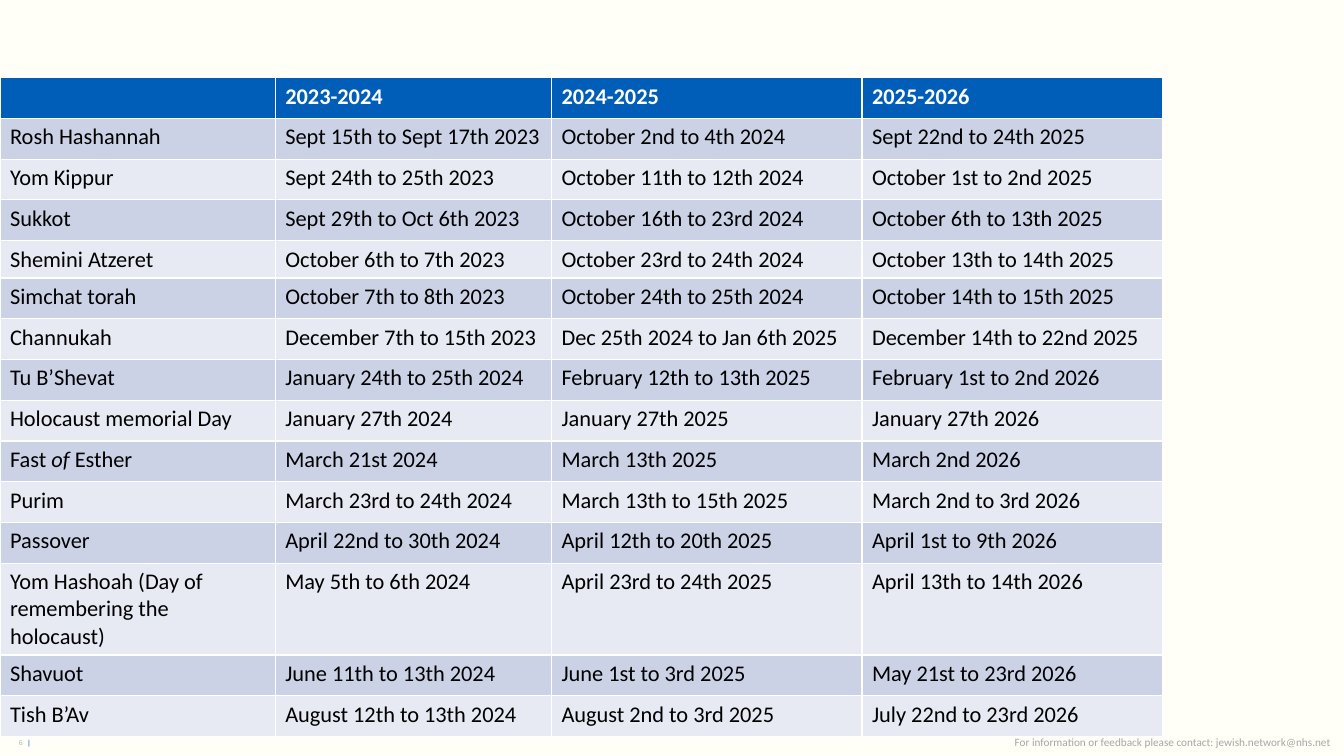
import pptx
import pptx.util
import pptx.dml.color
import pptx.enum.text
import pptx.oxml.ns
import lxml.etree

Inches = pptx.util.Inches
Pt = pptx.util.Pt
RGBColor = pptx.dml.color.RGBColor

CREAM = RGBColor(0xFF, 0xFF, 0xF7)
BLUE = RGBColor(0x00, 0x5E, 0xB8)
WHITE = RGBColor(0xFF, 0xFF, 0xFF)
BLACK = RGBColor(0x00, 0x00, 0x00)
DARK = RGBColor(0xCC, 0xD2, 0xE6)
LIGHT = RGBColor(0xE7, 0xEA, 0xF3)
GREY = RGBColor(0xA6, 0xA6, 0xA6)
STEEL = RGBColor(0xAD, 0xB6, 0xBE)

# Asterisks enclose italic words.
DATES = [
    ("", "2023-2024", "2024-2025", "2025-2026"),
    ("Rosh Hashannah", "Sept 15th to Sept 17th 2023", "October 2nd to 4th 2024", "Sept 22nd to 24th 2025"),
    ("Yom Kippur", "Sept 24th to 25th 2023", "October 11th to 12th 2024", "October 1st to 2nd 2025"),
    ("Sukkot", "Sept 29th to Oct 6th 2023", "October 16th to 23rd 2024", "October 6th to 13th 2025"),
    ("Shemini Atzeret", "October 6th to 7th 2023", "October 23rd to 24th 2024", "October 13th to 14th 2025"),
    ("Simchat torah", "October 7th to 8th 2023", "October 24th to 25th 2024", "October 14th to 15th 2025"),
    ("Channukah", "December 7th to 15th 2023", "Dec 25th 2024 to Jan 6th 2025", "December 14th to 22nd 2025"),
    ("Tu B’Shevat", "January 24th to 25th 2024", "February 12th to 13th 2025", "February 1st to 2nd 2026"),
    ("Holocaust memorial Day", "January 27th 2024", "January 27th 2025", "January 27th 2026"),
    ("Fast *of* Esther", "March 21st 2024", "March 13th 2025", "March 2nd 2026"),
    ("Purim", "March 23rd to 24th 2024", "March 13th to 15th 2025", "March 2nd to 3rd 2026"),
    ("Passover", "April 22nd to 30th 2024", "April 12th to 20th 2025", "April 1st to 9th 2026"),
    ("Yom Hashoah (Day of remembering the holocaust)", "May 5th to 6th 2024",
     "April 23rd to 24th 2025", "April 13th to 14th 2026"),
    ("Shavuot", "June 11th to 13th 2024", "June 1st to 3rd 2025", "May 21st to 23rd 2026"),
    ("Tish B’Av", "August 12th to 13th 2024", "August 2nd to 3rd 2025", "July 22nd to 23rd 2026"),
]
WIDTHS = (2.73, 2.74, 3.08, 2.98)
HEIGHTS = {"Shemini Atzeret": 0.37, DATES[12][0]: 0.91}


def add_run(para, text, font, size, color):
    run = para.add_run()
    run.text = text
    run.font.name = font
    run.font.size = Pt(size)
    run.font.color.rgb = color
    return run


def fill_cell(cell, text, fill, color, bold):
    cell.fill.solid()
    cell.fill.fore_color.rgb = fill
    para = cell.text_frame.paragraphs[0]
    for i, part in enumerate(text.split("*")):
        if part:
            run = add_run(para, part, "Calibri", 16, color)
            run.font.bold = bold
            run.font.italic = i % 2 == 1


def add_dates(slide, left, top, width, height):
    """Draw the holiday table; plain rows share the height left by the special ones."""
    table = slide.shapes.add_table(
        len(DATES), len(WIDTHS), Inches(left), Inches(top), Inches(width), Inches(height)
    ).table
    for col, size in zip(table.columns, WIDTHS):
        col.width = Inches(size)
    plain = (height - sum(HEIGHTS.values())) / (len(DATES) - len(HEIGHTS))
    for r, texts in enumerate(DATES):
        table.rows[r].height = Inches(HEIGHTS.get(texts[0], plain))
        head = r == 0
        fill = BLUE if head else DARK if r % 2 else LIGHT
        for c, text in enumerate(texts):
            fill_cell(table.cell(r, c), text, fill, WHITE if head else BLACK, head)


def add_box(slide, left, top, width, height):
    """Add a wrapping text box and return its first paragraph."""
    box = slide.shapes.add_textbox(Inches(left), Inches(top), Inches(width), Inches(height))
    box.text_frame.word_wrap = True
    return box.text_frame.paragraphs[0]


def add_page(slide, left, top, width, height):
    para = add_box(slide, left, top, width, height)
    qn = pptx.oxml.ns.qn
    tabs = lxml.etree.SubElement(para._p.get_or_add_pPr(), qn("a:tabLst"))
    lxml.etree.SubElement(tabs, qn("a:tab"), pos=str(Inches(0.09)), algn="l")
    add_run(para, "6", "Arial", 5.1, STEEL)
    add_run(para, "\t|", "Arial", 5.1, BLUE)


def add_contact(slide, left, top, width, height):
    para = add_box(slide, left, top, width, height)
    para.alignment = pptx.enum.text.PP_ALIGN.RIGHT
    add_run(para, "For information or feedback please contact: jewish.network@nhs.net",
            "Calibri", 8, GREY)


def main():
    deck = pptx.Presentation()
    deck.slide_width = Inches(13.33)
    deck.slide_height = Inches(7.5)
    slide = deck.slides.add_slide(deck.slide_layouts[6])
    slide.background.fill.solid()
    slide.background.fill.fore_color.rgb = CREAM
    add_page(slide, 0.09, 7.28, 0.94, 0.19)
    add_contact(slide, 9.65, 7.25, 3.65, 0.24)
    add_dates(slide, 0, 0.77, sum(WIDTHS), 6.54)
    deck.save("out.pptx")


if __name__ == "__main__":
    main()
